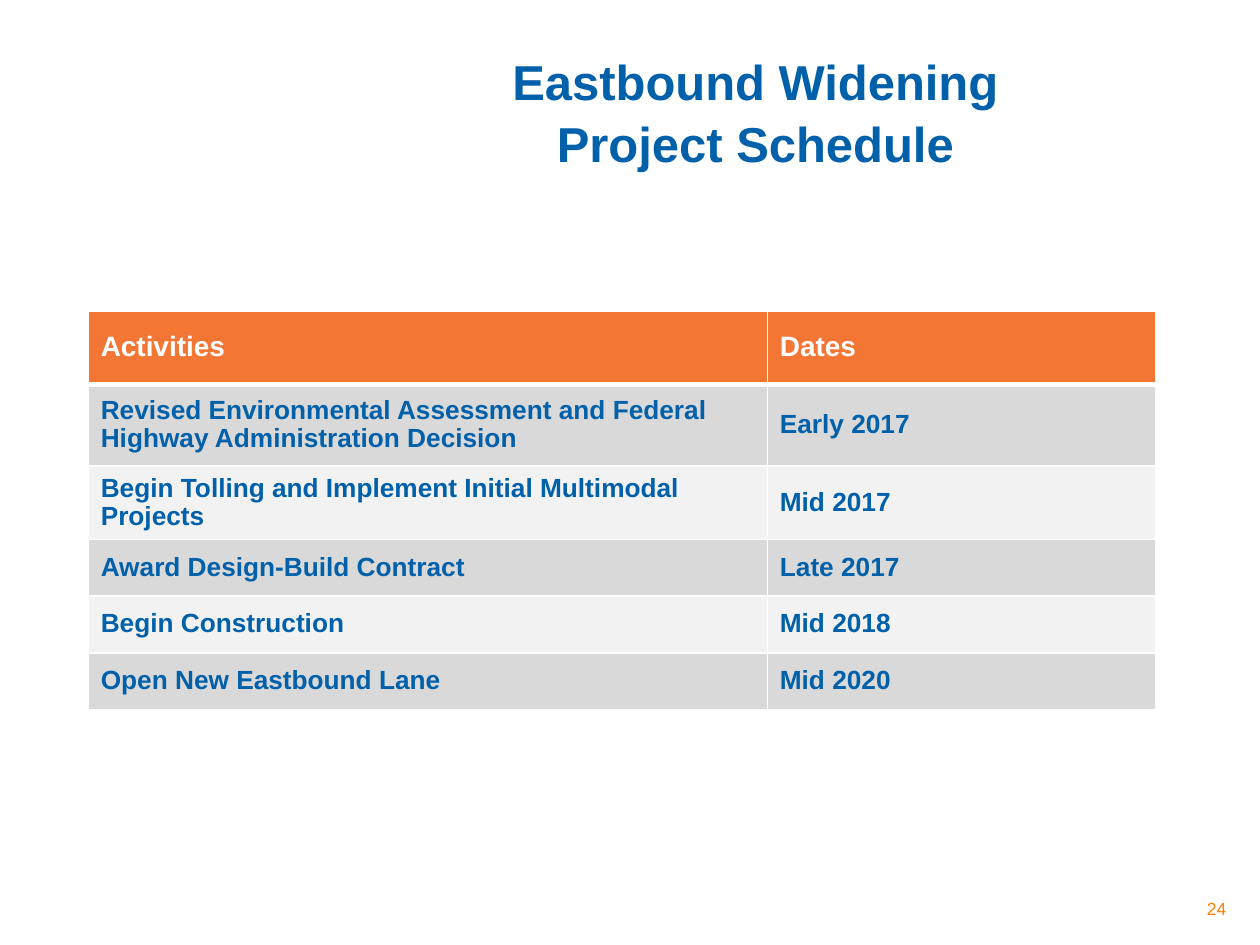
from typing import NamedTuple

from lxml.etree import SubElement
from pptx import Presentation
from pptx.dml.color import RGBColor
from pptx.enum.text import MSO_ANCHOR, PP_ALIGN
from pptx.oxml.ns import qn
from pptx.util import Inches, Pt

BLUE = RGBColor(0x00, 0x60, 0xAA)
ORANGE = RGBColor(0xF4, 0x76, 0x35)
PAGE_ORANGE = RGBColor(0xFF, 0x80, 0x00)
WHITE = RGBColor(0xFF, 0xFF, 0xFF)
DARK_BAND = RGBColor(0xD9, 0xD9, 0xD9)
LIGHT_BAND = RGBColor(0xF2, 0xF2, 0xF2)
FONT = "Arial"
COLUMNS = (5.39, 3.08)


class Row(NamedTuple):
    activity: str
    date: str
    height: float = 0.45


ROWS = [
    Row("Activities", "Dates", 0.58),
    Row("Revised Environmental Assessment and Federal Highway Administration Decision",
        "Early 2017", 0.65),
    Row("Begin Tolling and Implement Initial Multimodal Projects", "Mid 2017"),
    Row("Award Design-Build Contract", "Late 2017"),
    Row("Begin Construction", "Mid 2018"),
    Row("Open New Eastbound Lane", "Mid 2020"),
]


def set_font(p, size: float, color: RGBColor, bold: bool = True) -> None:
    p.font.name = FONT
    p.font.size = Pt(size)
    p.font.bold = bold
    p.font.color.rgb = color


def set_borders(cell, bottom: float, top: float) -> None:
    """Draw white borders; they must come before the fill in the cell."""
    tc_pr = cell._tc.get_or_add_tcPr()
    for side, width in (("lnL", 1), ("lnR", 1), ("lnT", top), ("lnB", bottom)):
        ln = SubElement(tc_pr, qn(f"a:{side}"), w=str(Pt(width)))
        fill = SubElement(ln, qn("a:solidFill"))
        SubElement(fill, qn("a:srgbClr"), val=str(WHITE))


def fill_cell(cell, text: str, row: int) -> None:
    header = row == 0
    set_borders(cell, bottom=3 if header else 1, top=3 if row == 1 else 1)
    cell.fill.solid()
    cell.fill.fore_color.rgb = ORANGE if header else DARK_BAND if row % 2 else LIGHT_BAND
    cell.vertical_anchor = MSO_ANCHOR.MIDDLE
    cell.text = text
    p = cell.text_frame.paragraphs[0]
    p.line_spacing = 0.96
    set_font(p, 16 if header else 15, WHITE if header else BLUE)


def add_schedule(s) -> None:
    height = sum(row.height for row in ROWS)
    table = s.shapes.add_table(len(ROWS), len(COLUMNS), Inches(0.7), Inches(2.47),
                               Inches(sum(COLUMNS)), Inches(height)).table
    for column, width in zip(table.columns, COLUMNS):
        column.width = Inches(width)
    for i, row in enumerate(ROWS):
        table.rows[i].height = Inches(row.height)
        for j, text in enumerate((row.activity, row.date)):
            fill_cell(table.cell(i, j), text, i)


def main() -> None:
    prs = Presentation()
    prs.slide_width, prs.slide_height = Inches(10), Inches(7.5)
    s = prs.slides.add_slide(prs.slide_layouts[5])

    # Title
    title = s.shapes.title
    title.left, title.top = Inches(2.33), Inches(0.25)
    title.width, title.height = Inches(7.33), Inches(1.25)
    tf = title.text_frame
    tf.text = "Eastbound Widening\vProject Schedule"
    tf.vertical_anchor = MSO_ANCHOR.MIDDLE
    p = tf.paragraphs[0]
    p.alignment = PP_ALIGN.CENTER
    p.line_spacing = 1.05
    set_font(p, 28, BLUE)

    # Page number
    sp = s.shapes.add_textbox(Inches(7.75), Inches(7.08), Inches(2.08), Inches(0.25))
    tf = sp.text_frame
    tf.word_wrap = True
    tf.text = "24"
    p = tf.paragraphs[0]
    p.alignment = PP_ALIGN.RIGHT
    set_font(p, 10, PAGE_ORANGE, bold=False)

    # Schedule table
    add_schedule(s)
    prs.save("out.pptx")


if __name__ == "__main__":
    main()
